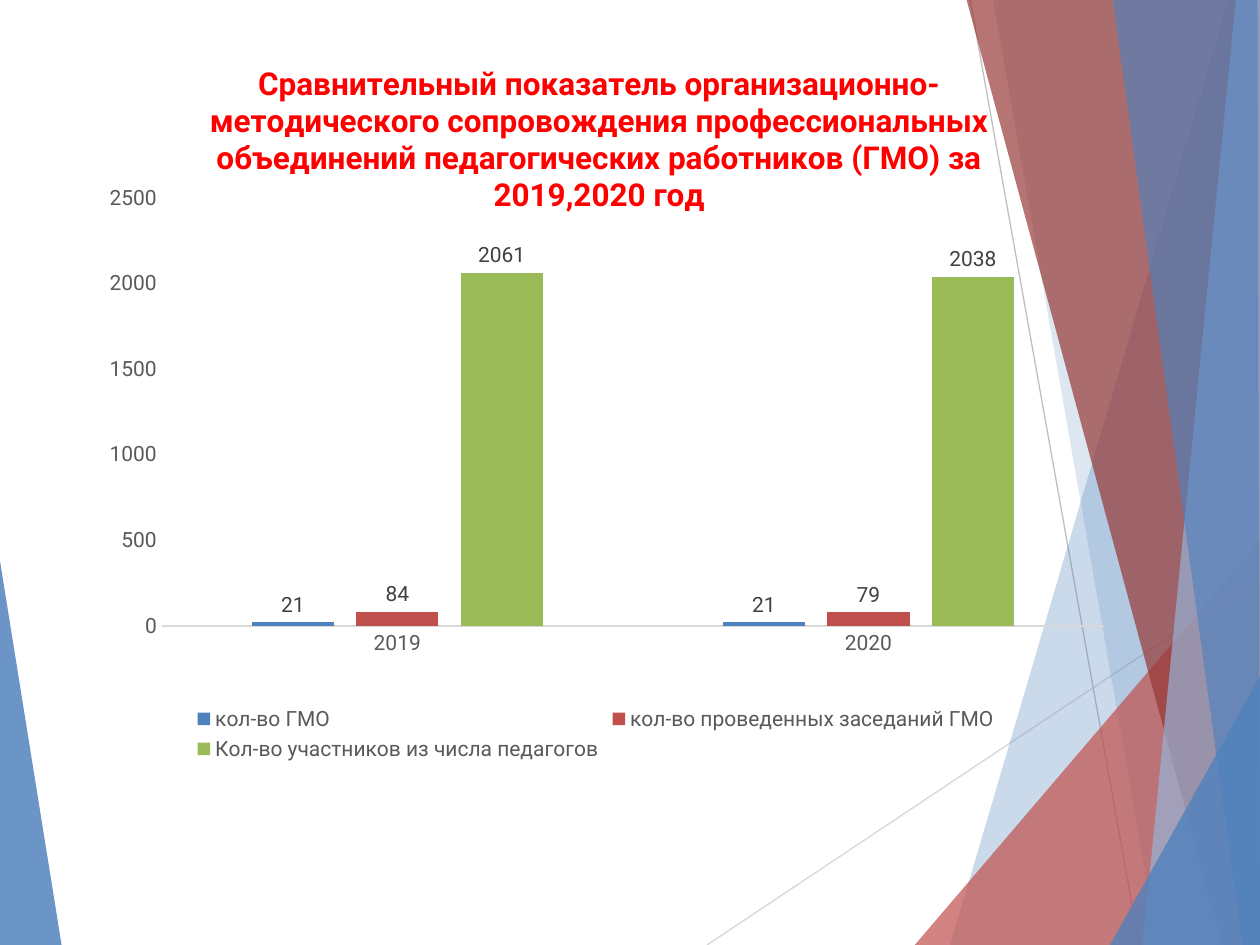
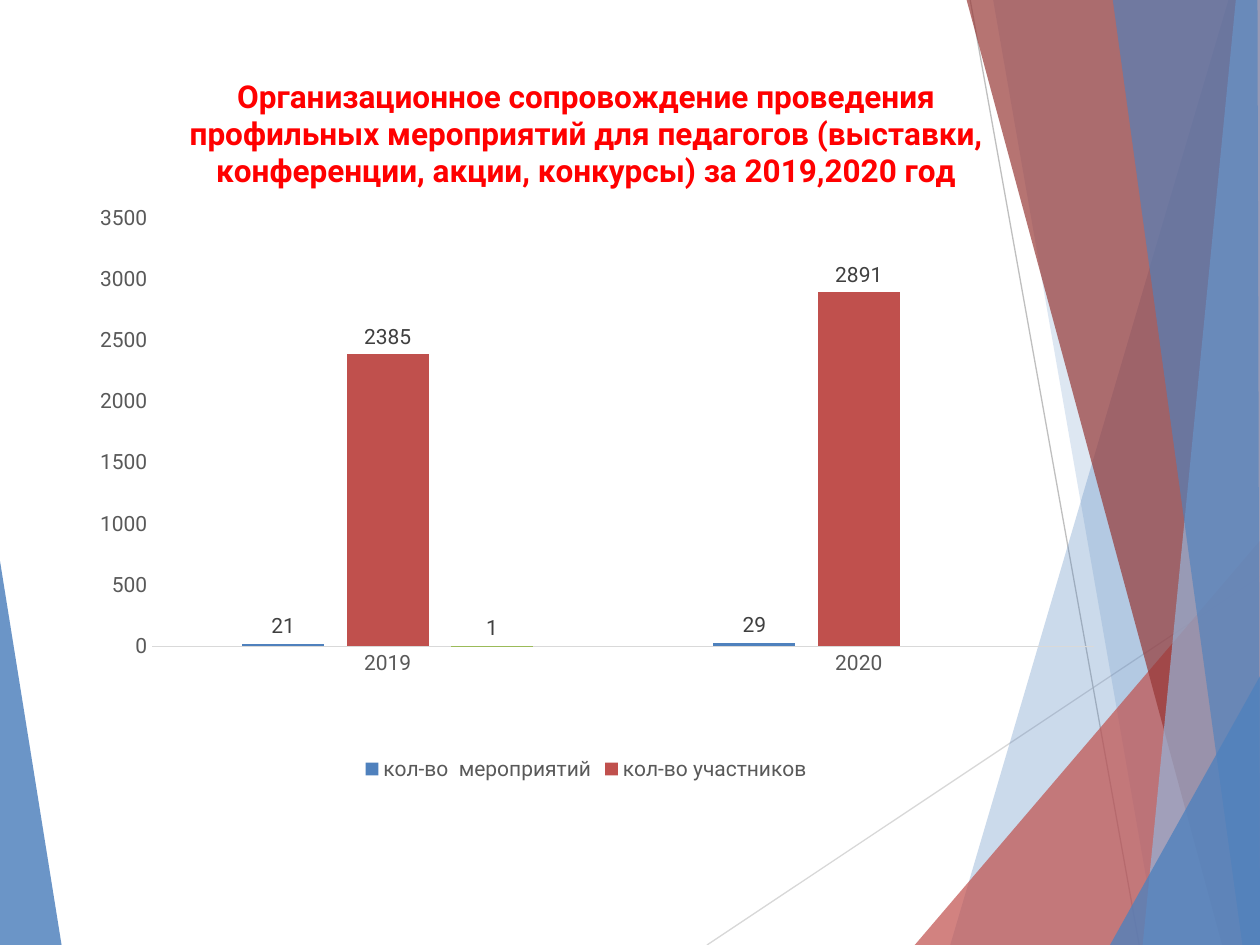
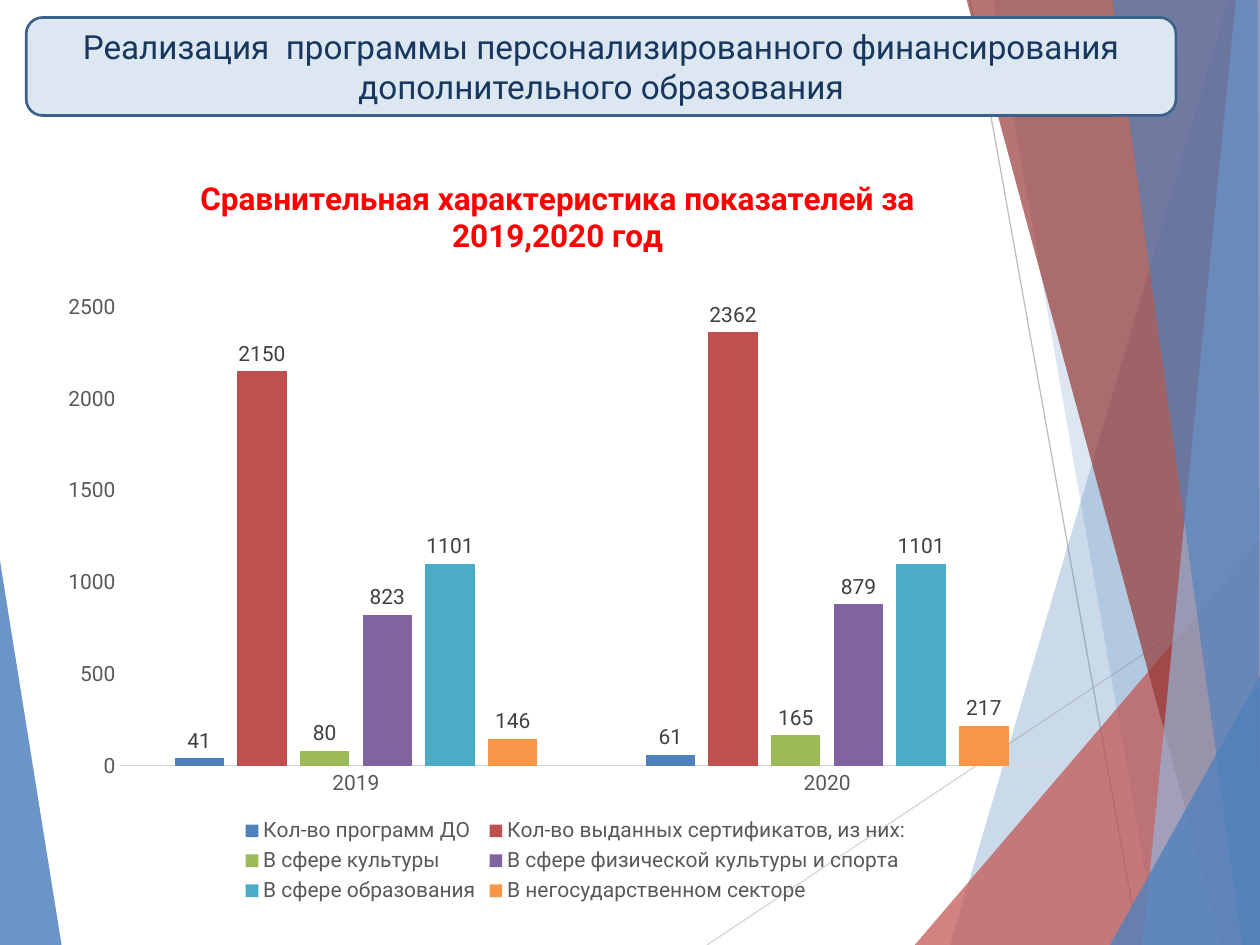
from pptx import Presentation
from pptx.chart.data import CategoryChartData
from pptx.dml.color import RGBColor
from pptx.enum.chart import XL_CHART_TYPE, XL_LABEL_POSITION, XL_LEGEND_POSITION, XL_TICK_MARK
from pptx.enum.shapes import MSO_CONNECTOR, MSO_SHAPE
from pptx.enum.text import MSO_ANCHOR, MSO_AUTO_SIZE, PP_ALIGN
from pptx.oxml import parse_xml
from pptx.oxml.ns import nsdecls, qn
from pptx.util import Pt

FONT = "Roboto"
WIDTH, HEIGHT = 720, 540
TITLE_ONLY, BLANK = 5, 6

BLUE = RGBColor(0x4F, 0x81, 0xBD)
RED = RGBColor(0xC0, 0x50, 0x4D)
GREEN = RGBColor(0x9B, 0xBB, 0x59)
PURPLE = RGBColor(0x80, 0x64, 0xA2)
TEAL = RGBColor(0x4B, 0xAC, 0xC6)
ORANGE = RGBColor(0xF7, 0x96, 0x46)
MAROON = RGBColor(0x96, 0x36, 0x34)
PALE_BLUE = RGBColor(0x96, 0xB4, 0xD8)
TITLE_RED = RGBColor(0xFF, 0x00, 0x00)
AXIS_TEXT = RGBColor(0x59, 0x59, 0x59)
LABEL_TEXT = RGBColor(0x40, 0x40, 0x40)
AXIS_LINE = RGBColor(0xD9, 0xD9, 0xD9)
LIGHT_RAY = RGBColor(0xD8, 0xD8, 0xD8)
DARK_RAY = RGBColor(0xBF, 0xBF, 0xBF)
BANNER_FILL = RGBColor(0xDC, 0xE7, 0xF1)
BANNER_LINE = RGBColor(0x3B, 0x60, 0x8C)
BANNER_TEXT = RGBColor(0x17, 0x37, 0x5E)

SERIES_COLORS = [BLUE, RED, GREEN, PURPLE, TEAL, ORANGE]
YEARS = ["2019", "2020"]

LEFT_SHARD = (BLUE, 84, [(-0.7, 316), (35.3, 540.5), (-0.7, 540)])
RAYS = [
    (LIGHT_RAY, (404, 540), (720.7, 329)),
    (DARK_RAY, (554.4, 0), (651, 540)),
]
RIGHT_SHARDS = [
    (BLUE, 29, [(702, 0), (543, 540), (721, 540), (720.7, 0)]),
    (BLUE, 19, [(567.4, -0.7), (661.7, 540), (720.7, 540), (720.7, -0.7)]),
    (RED, 71, [(522.7, 540), (720, 309), (720.7, 540)]),
    (MAROON, 69, [(552.2, -0.7), (698.4, 540), (720.7, 540), (720.7, -0.7)]),
    (PALE_BLUE, 69, [(706.3, -0.7), (653, 540), (720.7, 540), (720, -0.7)]),
    (BLUE, 64, [(635.8, -0.7), (710, 540), (720, 540), (718.6, -0.7)]),
    (BLUE, 79, [(634.3, 540), (720.7, 385.2), (720.7, 540)]),
]


def style_font(font, size, color, bold=False):
    """Apply the deck font with a size, colour and weight."""
    font.name = FONT
    font.size = Pt(size)
    font.bold = bold
    font.color.rgb = color


def add_shard(shapes, color, opacity, points):
    """Draw one translucent polygon."""
    corners = [(Pt(x), Pt(y)) for x, y in points]
    builder = shapes.build_freeform(*corners[0], scale=1.0)
    builder.add_line_segments(corners[1:], close=True)
    sp = builder.convert_to_shape()
    sp.shadow.inherit = False
    sp.line.fill.background()
    sp.fill.solid()
    sp.fill.fore_color.rgb = color
    alpha = parse_xml(f'<a:alpha {nsdecls("a")} val="{opacity * 1000}"/>')
    sp.element.spPr.find(".//" + qn("a:srgbClr")).append(alpha)


def add_ray(shapes, color, start, end):
    """Draw one thin decorative line."""
    ray = shapes.add_connector(MSO_CONNECTOR.STRAIGHT, *map(Pt, start + end))
    ray.line.color.rgb = color
    ray.line.width = Pt(0.75)
    ray.element.spPr.append(parse_xml(f'<a:effectLst {nsdecls("a")}/>'))


def decorate_master(prs, s):
    """Draw the shards on a slide and move them to the master."""
    group = s.shapes.add_group_shape()
    add_shard(group.shapes, *LEFT_SHARD)
    for ray in RAYS:
        add_ray(group.shapes, *ray)
    for shard in RIGHT_SHARDS:
        add_shard(group.shapes, *shard)
    tree = prs.slide_master.shapes.element
    tree.append(group.element)
    for number, props in enumerate(tree.iter(qn("p:cNvPr")), 1):
        props.set("id", str(number))


def set_layout(element, index, target="", **fractions):
    """Give a chart part a manual layout in fractions of the chart."""
    for old in element.findall(qn("c:layout")):
        element.remove(old)
    inner = f'<c:layoutTarget val="{target}"/>' if target else ""
    inner += "".join(f'<c:{k}Mode val="edge"/>' for k in fractions if k in "xy")
    inner += "".join(f'<c:{k} val="{v}"/>' for k, v in fractions.items())
    element.insert(index, parse_xml(
        f'<c:layout {nsdecls("c")}><c:manualLayout>{inner}</c:manualLayout></c:layout>'))


def style_axes(chart):
    """Format both axes without gridlines or tick marks."""
    for axis in (chart.category_axis, chart.value_axis):
        axis.has_major_gridlines = False
        axis.major_tick_mark = axis.minor_tick_mark = XL_TICK_MARK.NONE
        style_font(axis.tick_labels.font, 12, AXIS_TEXT)
    chart.category_axis.format.line.color.rgb = AXIS_LINE
    chart.category_axis.format.line.width = Pt(0.75)
    chart.value_axis.format.line.fill.background()


def style_series(plot):
    """Colour the columns and label each with its value."""
    plot.gap_width = 219
    plot.overlap = -27
    plot.vary_by_categories = False
    for series, color in zip(plot.series, SERIES_COLORS):
        series.format.fill.solid()
        series.format.fill.fore_color.rgb = color
        series.invert_if_negative = False
        labels = series.data_labels
        labels.show_value = True
        labels.position = XL_LABEL_POSITION.OUTSIDE_END
        style_font(labels.font, 12, LABEL_TEXT)


def add_legend(chart, hidden):
    """Put the legend at the bottom, leaving out the hidden entries."""
    chart.has_legend = True
    legend = chart.legend
    legend.position = XL_LEGEND_POSITION.BOTTOM
    legend.include_in_layout = False
    style_font(legend.font, 12, AXIS_TEXT)
    for index in hidden:
        chart.element.find(".//" + qn("c:legend")).insert(1, parse_xml(
            f'<c:legendEntry {nsdecls("c")}><c:idx val="{index}"/>'
            '<c:delete val="1"/></c:legendEntry>'))


def add_column_chart(s, box, title, title_at, plot_at, rows, hidden=()):
    """Add a titled clustered column chart in the given box."""
    data = CategoryChartData()
    data.categories = YEARS
    for name, values in rows:
        data.add_series(name, values)
    chart = s.shapes.add_chart(XL_CHART_TYPE.COLUMN_CLUSTERED, *map(Pt, box), data).chart
    chart.font.name = FONT
    chart.font.size = Pt(10)
    chart.has_title = True
    tf = chart.chart_title.text_frame
    tf.text = title
    style_font(tf.paragraphs[0].runs[0].font, 18, TITLE_RED, bold=True)
    set_layout(chart.element.find(".//" + qn("c:title")), 1, x=title_at[0], y=title_at[1])
    set_layout(chart.element.find(".//" + qn("c:plotArea")), 0, "inner",
               x=plot_at[0], y=plot_at[1], w=0.89, h=0.58)
    style_axes(chart)
    style_series(chart.plots[0])
    add_legend(chart, hidden)


def add_banner(s, box, text):
    """Place the slide title on a rounded panel."""
    left, top, width, height = map(Pt, box)
    panel = s.shapes.add_shape(MSO_SHAPE.ROUNDED_RECTANGLE, left, top, width, height)
    panel.shadow.inherit = False
    panel.fill.solid()
    panel.fill.fore_color.rgb = BANNER_FILL
    panel.line.color.rgb = BANNER_LINE
    panel.line.width = Pt(1.5)
    title = s.shapes.title
    title.left, title.top, title.width, title.height = left, top, width, height
    s.shapes.element.append(title.element)
    tf = title.text_frame
    tf.text = text
    tf.word_wrap = True
    tf.auto_size = MSO_AUTO_SIZE.NONE
    tf.vertical_anchor = MSO_ANCHOR.MIDDLE
    p = tf.paragraphs[0]
    p.alignment = PP_ALIGN.CENTER
    style_font(p.runs[0].font, 19, BANNER_TEXT)


def main():
    """Build the three slides and save the deck."""
    prs = Presentation()
    prs.slide_width, prs.slide_height = Pt(WIDTH), Pt(HEIGHT)

    s = prs.slides.add_slide(prs.slide_layouts[BLANK])
    decorate_master(prs, s)
    add_column_chart(
        s, (38, 16, 605, 422),
        "Сравнительный показатель организационно-методического сопровождения "
        "профессиональных объединений педагогических работников (ГМО) за 2019,2020 год",
        (0.13, 0.04), (0.09, 0.23),
        [("кол-во ГМО", (21, 21)),
         ("кол-во проведенных заседаний ГМО", (84, 79)),
         ("Кол-во участников из числа педагогов", (2061, 2038))])

    s = prs.slides.add_slide(prs.slide_layouts[BLANK])
    add_column_chart(
        s, (32.5, 27.5, 605, 422),
        "Организационное сопровождение проведения профильных мероприятий для педагогов "
        "(выставки, конференции, акции, конкурсы) за 2019,2020 год",
        (0.12, 0.03), (0.09, 0.23),
        [("кол-во  мероприятий", (21, 29)),
         ("кол-во участников", (2385, 2891)),
         ("Series 3", (1, None))],
        hidden=[2])

    s = prs.slides.add_slide(prs.slide_layouts[TITLE_ONLY])
    add_banner(s, (15, 10, 657, 56),
               "Реализация  программы персонализированного финансирования "
               "дополнительного образования")
    add_column_chart(
        s, (26.5, 67, 605, 452),
        "Сравнительная характеристика показателей за 2019,2020 год",
        (0.14, 0.07), (0.07, 0.24),
        [("Кол-во программ ДО", (41, 61)),
         ("Кол-во выданных сертификатов, из них:", (2150, 2362)),
         ("В сфере культуры", (80, 165)),
         ("В сфере физической культуры и спорта", (823, 879)),
         ("В сфере образования", (1101, 1101)),
         ("В негосударственном секторе", (146, 217))])

    prs.save("out.pptx")


if __name__ == "__main__":
    main()
